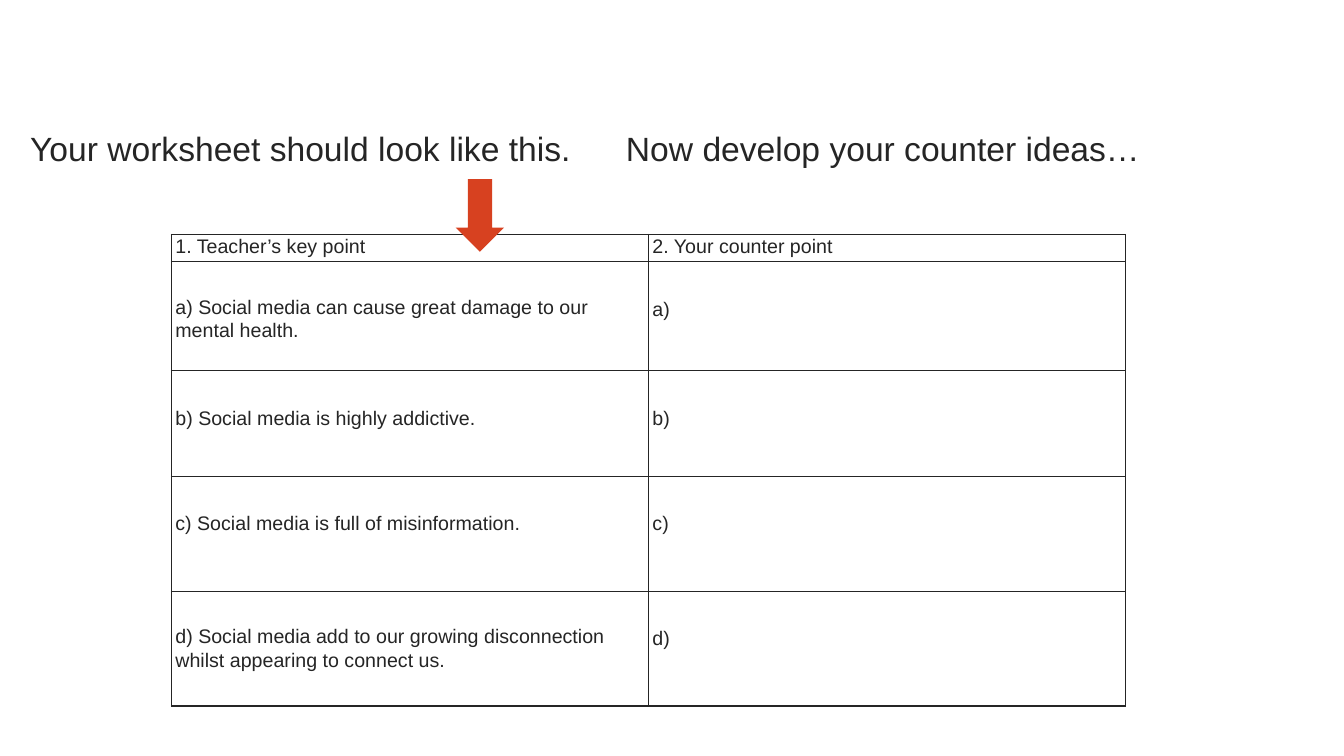
from dataclasses import dataclass

from lxml.etree import SubElement
from pptx import Presentation
from pptx.dml.color import RGBColor
from pptx.enum.shapes import MSO_SHAPE
from pptx.enum.text import MSO_ANCHOR
from pptx.oxml import parse_xml
from pptx.oxml.ns import nsdecls, qn
from pptx.slide import Slide
from pptx.table import _Cell
from pptx.util import Inches, Length, Pt

SLIDE_WIDTH = Inches(13.33)
SLIDE_HEIGHT = Inches(7.5)
FONT = "Arial"
COLOURS = {"ink": "252525", "arrow": "D74120"}


@dataclass(frozen=True)
class Area:
    left: float
    top: float
    width: float
    height: float

    def box(self) -> tuple[Length, Length, Length, Length]:
        return (
            Length(int(SLIDE_WIDTH * self.left / 100)),
            Length(int(SLIDE_HEIGHT * self.top / 100)),
            Length(int(SLIDE_WIDTH * self.width / 100)),
            Length(int(SLIDE_HEIGHT * self.height / 100)),
        )


@dataclass(frozen=True)
class WorksheetRow:
    key_point: str
    counter_point: str
    height: float
    key_inset: float = 0.35
    counter_inset: float = 0.35


HEADING_AREA = Area(1.5, 14.67, 96.02, 10.53)
WORKSHEET_AREA = Area(12.75, 31.0, 71.0, 62.4)
ARROW_AREA = Area(33.91, 23.7, 3.6, 9.6)
HEADING = ("Your worksheet should look like this.", "Now develop your counter ideas…")
HEADING_TAB = Inches(5.91)

WORKSHEET = [
    WorksheetRow("1. Teacher’s key point", "2. Your counter point", 3.6, 0, 0),
    WorksheetRow(
        "a) Social media can cause great damage to our mental health.",
        "a)", 14.4, key_inset=0.33,
    ),
    WorksheetRow("b) Social media is highly addictive.", "b)", 14.0),
    WorksheetRow("c) Social media is full of misinformation.", "c)", 15.2),
    WorksheetRow(
        "d) Social media add to our growing disconnection "
        "whilst appearing to connect us.",
        "d)", 15.2, key_inset=0.33,
    ),
]


def add_run(paragraph, text: str, size: float) -> None:
    run = paragraph.add_run()
    run.text = text
    run.font.name = FONT
    run.font.size = Pt(size)
    run.font.color.rgb = RGBColor.from_string(COLOURS["ink"])


def add_heading(slide: Slide) -> None:
    heading = slide.shapes.add_textbox(*HEADING_AREA.box()).text_frame
    heading.word_wrap = True
    heading.vertical_anchor = MSO_ANCHOR.MIDDLE
    paragraph = heading.paragraphs[0]
    tabs = SubElement(paragraph._p.get_or_add_pPr(), qn("a:tabLst"))
    SubElement(tabs, qn("a:tab"), pos=str(int(HEADING_TAB)), algn="l")
    paragraph.line_spacing = 0.9
    statement, task = HEADING
    add_run(paragraph, statement, 24)
    add_run(paragraph, "\t" + task, 24)


def add_borders(cell: _Cell) -> None:
    properties = cell._tc.get_or_add_tcPr()
    for position, side in enumerate("LRTB"):
        border = parse_xml(
            f'<a:ln{side} {nsdecls("a")} w="{int(Pt(1))}"><a:solidFill>'
            f'<a:srgbClr val="{COLOURS["ink"]}"/></a:solidFill></a:ln{side}>'
        )
        properties.insert(position, border)


def fill_cell(cell: _Cell, text: str, inset: float) -> None:
    cell.margin_left = cell.margin_right = Inches(0.04)
    cell.margin_top = Inches(inset)
    cell.margin_bottom = 0
    cell.vertical_anchor = MSO_ANCHOR.TOP
    cell.fill.background()
    add_borders(cell)
    paragraph = cell.text_frame.paragraphs[0]
    paragraph.line_spacing = 1.07
    add_run(paragraph, text, 14)


def add_worksheet(slide: Slide) -> None:
    table = slide.shapes.add_table(len(WORKSHEET), 2, *WORKSHEET_AREA.box()).table
    table.first_row = False
    table.horz_banding = False
    for row, entry in zip(table.rows, WORKSHEET):
        row.height = Length(int(SLIDE_HEIGHT * entry.height / 100))
        key_cell, counter_cell = row.cells
        fill_cell(key_cell, entry.key_point, entry.key_inset)
        fill_cell(counter_cell, entry.counter_point, entry.counter_inset)


def add_arrow(slide: Slide) -> None:
    arrow = slide.shapes.add_shape(MSO_SHAPE.DOWN_ARROW, *ARROW_AREA.box())
    arrow.shadow.inherit = False
    arrow.fill.solid()
    arrow.fill.fore_color.rgb = RGBColor.from_string(COLOURS["arrow"])
    arrow.line.fill.background()


def main() -> None:
    deck = Presentation()
    deck.slide_width = SLIDE_WIDTH
    deck.slide_height = SLIDE_HEIGHT
    slide = deck.slides.add_slide(deck.slide_layouts[6])
    add_heading(slide)
    add_worksheet(slide)
    add_arrow(slide)
    deck.save("out.pptx")


if __name__ == "__main__":
    main()
